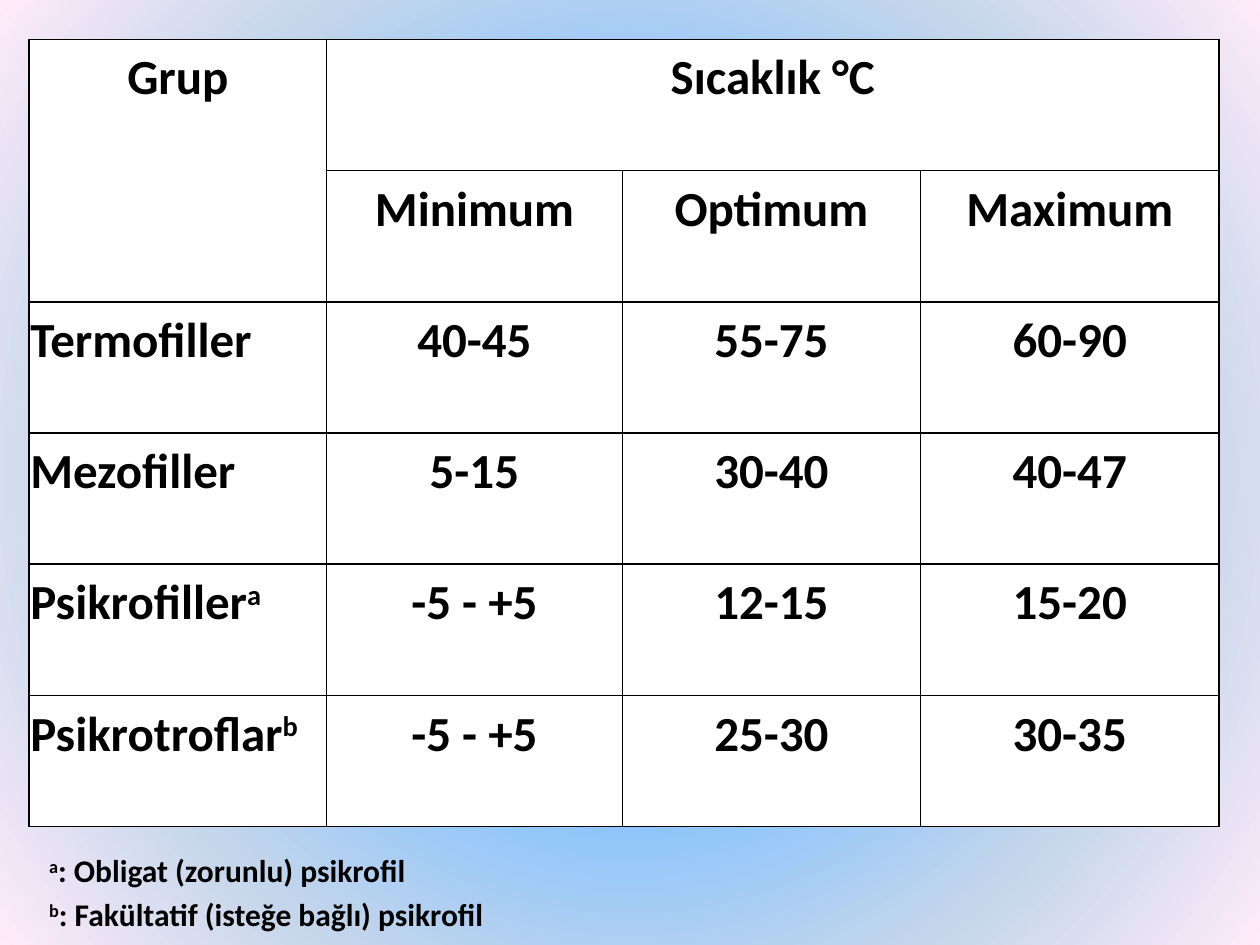
from pptx import Presentation
from pptx.dml.color import RGBColor
from pptx.enum import text
from pptx.oxml import parse_xml
from pptx.oxml import ns
from pptx.util import Pt

BLACK = RGBColor(0, 0, 0)
WHITE = RGBColor(255, 255, 255)
GLOW = [
    (0, RGBColor(0x5E, 0x9E, 0xFF)),
    (40, RGBColor(0x85, 0xC2, 0xFF)),
    (70, RGBColor(0xC4, 0xD6, 0xEB)),
    (100, RGBColor(0xFF, 0xEB, 0xFA)),
]
ROWS = [
    ("Grup", "Sıcaklık °C", "", ""),
    ("", "Minimum", "Optimum", "Maximum"),
    ("Termofiller", "40-45", "55-75", "60-90"),
    ("Mezofiller", "5-15", "30-40", "40-47"),
    (("Psikrofiller", "a"), "-5 - +5", "12-15", "15-20"),
    (("Psikrotroflar", "b"), "-5 - +5", "25-30", "30-35"),
]
NOTES = [
    ("", "a", ": Obligat (zorunlu) psikrofil"),
    ("", "b", ": Fakültatif (isteğe bağlı) psikrofil"),
]
WIDTHS = [170, 169, 170.5, 170.5]
HEIGHT = 75
PLAIN = "{2D5ABB26-0587-4C30-8999-92F81FD0307C}"


def paint(slide):
    stops = "".join(
        f'<a:gs pos="{pos * 1000}"><a:srgbClr val="{tint}"/></a:gs>'
        for pos, tint in GLOW)
    slide.element.cSld.insert(0, parse_xml(
        f'<p:bg {ns.nsdecls("p", "a")}><p:bgPr><a:gradFill rotWithShape="1">'
        f'<a:gsLst>{stops}</a:gsLst><a:path path="circle">'
        '<a:fillToRect l="50000" t="50000" r="50000" b="50000"/></a:path>'
        '</a:gradFill><a:effectLst/></p:bgPr></p:bg>'))


def grid(slide, left, top, widths, heights):
    frame = slide.shapes.add_table(
        len(heights), len(widths), Pt(left), Pt(top),
        Pt(sum(widths)), Pt(sum(heights)))
    table = frame.table
    table.first_row = table.horz_banding = False
    style = frame.element.find(".//" + ns.qn("a:tableStyleId"))
    style.text = PLAIN
    for col, width in zip(table.columns, widths):
        col.width = Pt(width)
    for row, height in zip(table.rows, heights):
        row.height = Pt(height)
    return table


def inset(cell, side):
    cell.margin_left = cell.margin_right = Pt(side)
    cell.margin_top = cell.margin_bottom = 0


def write(para, parts, size):
    para.line_spacing = 1.15
    for i, part in enumerate(parts):
        if not part:
            continue
        run = para.add_run()
        run.text = part
        font = run.font
        font.name, font.size, font.bold = "Calibri", Pt(size), True
        font.color.rgb = BLACK
        if i == 1:
            font._element.set("baseline", "30000")


def border(cell):
    props = cell._tc.get_or_add_tcPr()
    for side in "LRTB":
        props.append(parse_xml(
            f'<a:ln{side} {ns.nsdecls("a")} w="{Pt(1)}"><a:solidFill>'
            f'<a:srgbClr val="{BLACK}"/></a:solidFill></a:ln{side}>'))


def main():
    prs = Presentation()
    prs.slide_width, prs.slide_height = Pt(720), Pt(540)
    slide = prs.slides.add_slide(prs.slide_layouts[6])
    paint(slide)

    table = grid(slide, 16.6, 22.5, WIDTHS, [HEIGHT] * len(ROWS))
    for r, row in enumerate(ROWS):
        for c, item in enumerate(row):
            cell = table.cell(r, c)
            inset(cell, 0.7)
            border(cell)
            cell.fill.solid()
            cell.fill.fore_color.rgb = WHITE
            para = cell.text_frame.paragraphs[0]
            head = c == 0 and r > 1
            if not head:
                para.alignment = text.PP_ALIGN.CENTER
            props = para._p.get_or_add_pPr()
            props.set("marL", str(Pt(3 if head else 0)))
            props.set("indent", str(Pt(-30)))
            write(para, (item,) if isinstance(item, str) else item, 28)
    table.cell(0, 0).merge(table.cell(1, 0))
    table.cell(0, 1).merge(table.cell(0, 3))

    cell = grid(slide, 28.1, 484, [355], [48]).cell(0, 0)
    inset(cell, 0)
    frame = cell.text_frame
    for i, note in enumerate(NOTES):
        para = frame.add_paragraph() if i else frame.paragraphs[0]
        write(para, note, 18)

    prs.save("out.pptx")


if __name__ == "__main__":
    main()
